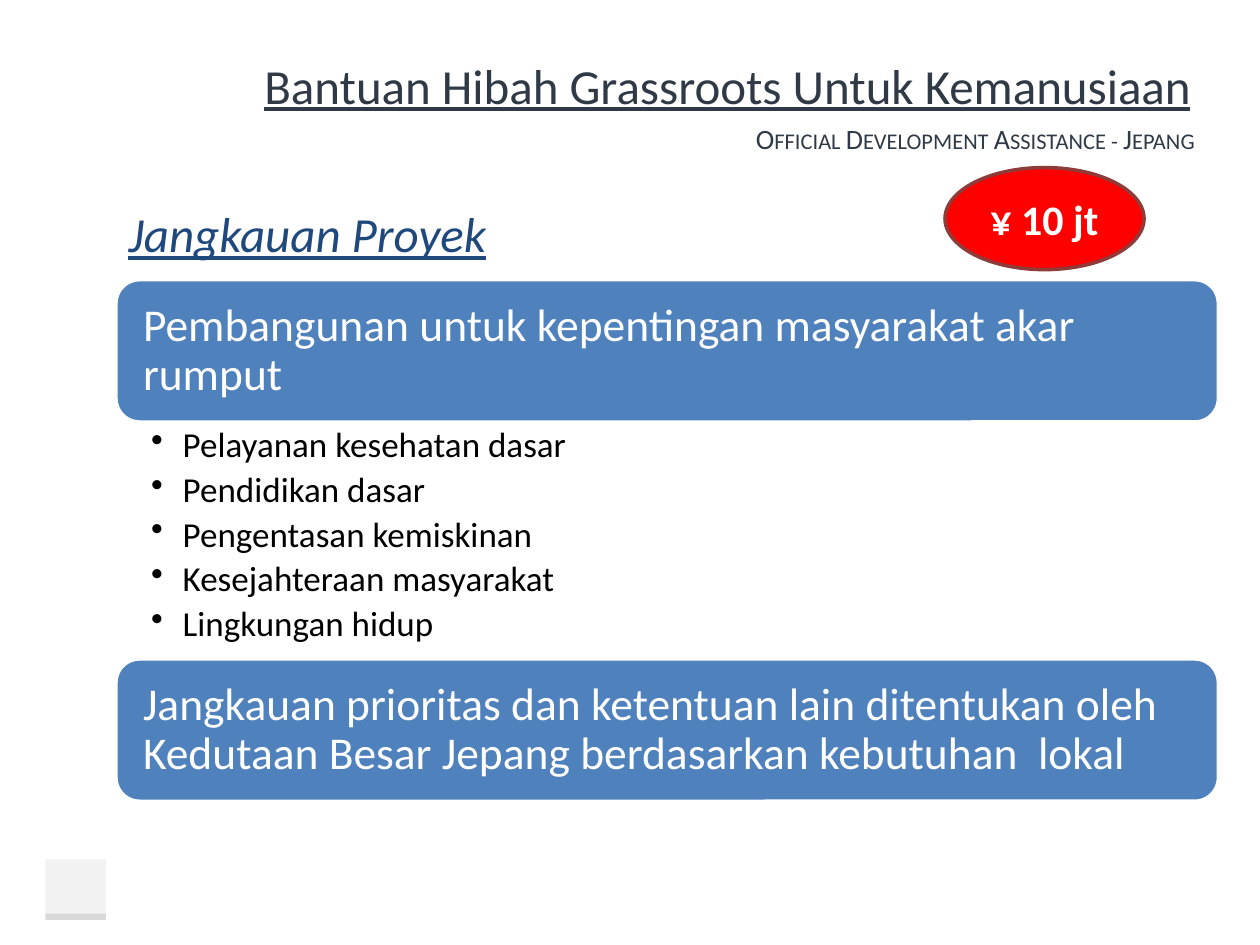
import pptx
import pptx.util
import pptx.dml.color
import pptx.enum.shapes
import pptx.enum.text
import pptx.oxml
import pptx.oxml.ns
from lxml import etree

Inches = pptx.util.Inches
Pt = pptx.util.Pt
RGBColor = pptx.dml.color.RGBColor
Shapes = pptx.enum.shapes.MSO_SHAPE
Align = pptx.enum.text.PP_ALIGN
Anchor = pptx.enum.text.MSO_ANCHOR

SLATE = RGBColor(0x2F, 0x3A, 0x46)
NAVY = RGBColor(0x1F, 0x49, 0x7D)
BLUE = RGBColor(0x4F, 0x81, 0xBD)
RED = RGBColor(0xFF, 0x00, 0x00)
MAROON = RGBColor(0x8E, 0x3B, 0x39)
WHITE = RGBColor(0xFF, 0xFF, 0xFF)
BLACK = RGBColor(0x00, 0x00, 0x00)
PALE_GREY = RGBColor(0xF2, 0xF2, 0xF2)
GREY = RGBColor(0xD9, 0xD9, 0xD9)

TITLE = "Bantuan Hibah Grassroots Untuk Kemanusiaan"
SUBTITLE = "Official Development Assistance - Jepang"
HEADING = "Jangkauan Proyek"
AMOUNT = "¥ 10 jt"
SECTIONS = [
    ("Pembangunan untuk kepentingan masyarakat akar rumput",
     ["Pelayanan kesehatan dasar", "Pendidikan dasar", "Pengentasan kemiskinan",
      "Kesejahteraan masyarakat", "Lingkungan hidup"]),
    ("Jangkauan prioritas dan ketentuan lain ditentukan oleh "
     "Kedutaan Besar Jepang berdasarkan kebutuhan  lokal", []),
]

LIST_LEFT, LIST_TOP, LIST_WIDTH = 0.92, 2.22, 8.75
BANNER_HEIGHT, BULLETS_HEIGHT = 1.13, 1.88


def add_part(slide, kind, box, fill, outline=None):
    part = slide.shapes.add_shape(kind, *map(Inches, box))
    part.shadow.inherit = False
    part.fill.solid()
    part.fill.fore_color.rgb = fill
    if outline is None:
        part.line.fill.background()
    else:
        part.line.color.rgb = outline
        part.line.width = Pt(2)
    return part


def add_text_area(slide, box):
    return slide.shapes.add_textbox(*map(Inches, box))


def set_frame(part, anchor=Anchor.TOP, insets=(0.1, 0.05, 0.1, 0.05)):
    frame = part.text_frame
    frame.word_wrap = True
    frame.vertical_anchor = anchor
    frame.margin_left, frame.margin_top, frame.margin_right, frame.margin_bottom = map(Inches, insets)
    return frame


def write(paragraph, words, size, color, align=Align.LEFT, bold=False, italic=False, underline=False):
    paragraph.alignment = align
    run = paragraph.add_run()
    run.text = words
    run.font.name = "Calibri"
    run.font.size = Pt(size)
    run.font.color.rgb = color
    run.font.bold = bold
    run.font.italic = italic
    run.font.underline = underline
    return run


def add_bullet(paragraph):
    properties = paragraph._p.get_or_add_pPr()
    properties.set("marL", str(Inches(0.25)))
    properties.set("indent", str(-Inches(0.25)))
    bullet = etree.SubElement(properties, pptx.oxml.ns.qn("a:buChar"))
    bullet.set("char", "•")


def add_sections(slide):
    top = LIST_TOP
    for banner_words, bullets in SECTIONS:
        banner = add_part(slide, Shapes.ROUNDED_RECTANGLE,
                          (LIST_LEFT, top, LIST_WIDTH, BANNER_HEIGHT), BLUE, WHITE)
        paragraph = set_frame(banner, Anchor.MIDDLE, (0.16, 0.11, 0.16, 0.11)).paragraphs[0]
        paragraph.line_spacing = 0.9
        write(paragraph, banner_words, 26, WHITE)
        top += BANNER_HEIGHT
        if not bullets:
            continue
        area = add_text_area(slide, (LIST_LEFT, top, LIST_WIDTH, BULLETS_HEIGHT))
        frame = set_frame(area, insets=(0.28, 0.04, 0.2, 0.04))
        for index, words in enumerate(bullets):
            paragraph = frame.add_paragraph() if index else frame.paragraphs[0]
            add_bullet(paragraph)
            paragraph.line_spacing = 0.9
            paragraph.space_after = Pt(4)
            write(paragraph, words, 20, BLACK)
        top += BULLETS_HEIGHT


def main():
    deck = pptx.Presentation()
    deck.slide_width, deck.slide_height = Inches(10), Inches(7.5)
    slide = deck.slides.add_slide(deck.slide_layouts[6])

    add_part(slide, Shapes.RECTANGLE, (0.36, 6.82, 0.48, 0.48), PALE_GREY)
    add_part(slide, Shapes.RECTANGLE, (0.36, 7.25, 0.48, 0.05), GREY)

    subtitle = set_frame(add_text_area(slide, (3.27, 0.94, 6.31, 0.31)), Anchor.MIDDLE)
    run = write(subtitle.paragraphs[0], SUBTITLE, 16, SLATE, Align.RIGHT)
    run.font._element.set("cap", "small")

    title = set_frame(add_text_area(slide, (2, 0.33, 7.67, 0.68)), Anchor.MIDDLE)
    write(title.paragraphs[0], TITLE, 28, SLATE, underline=True)

    add_sections(slide)

    heading = set_frame(add_text_area(slide, (0.92, 1.57, 4.92, 0.57)))
    write(heading.paragraphs[0], HEADING, 28, NAVY, italic=True, underline=True)

    amount = add_part(slide, Shapes.OVAL, (7.5, 1.33, 1.58, 0.81), RED, MAROON)
    write(set_frame(amount, Anchor.MIDDLE).paragraphs[0], AMOUNT, 24, WHITE, Align.CENTER, bold=True)

    deck.save("out.pptx")


if __name__ == "__main__":
    main()
